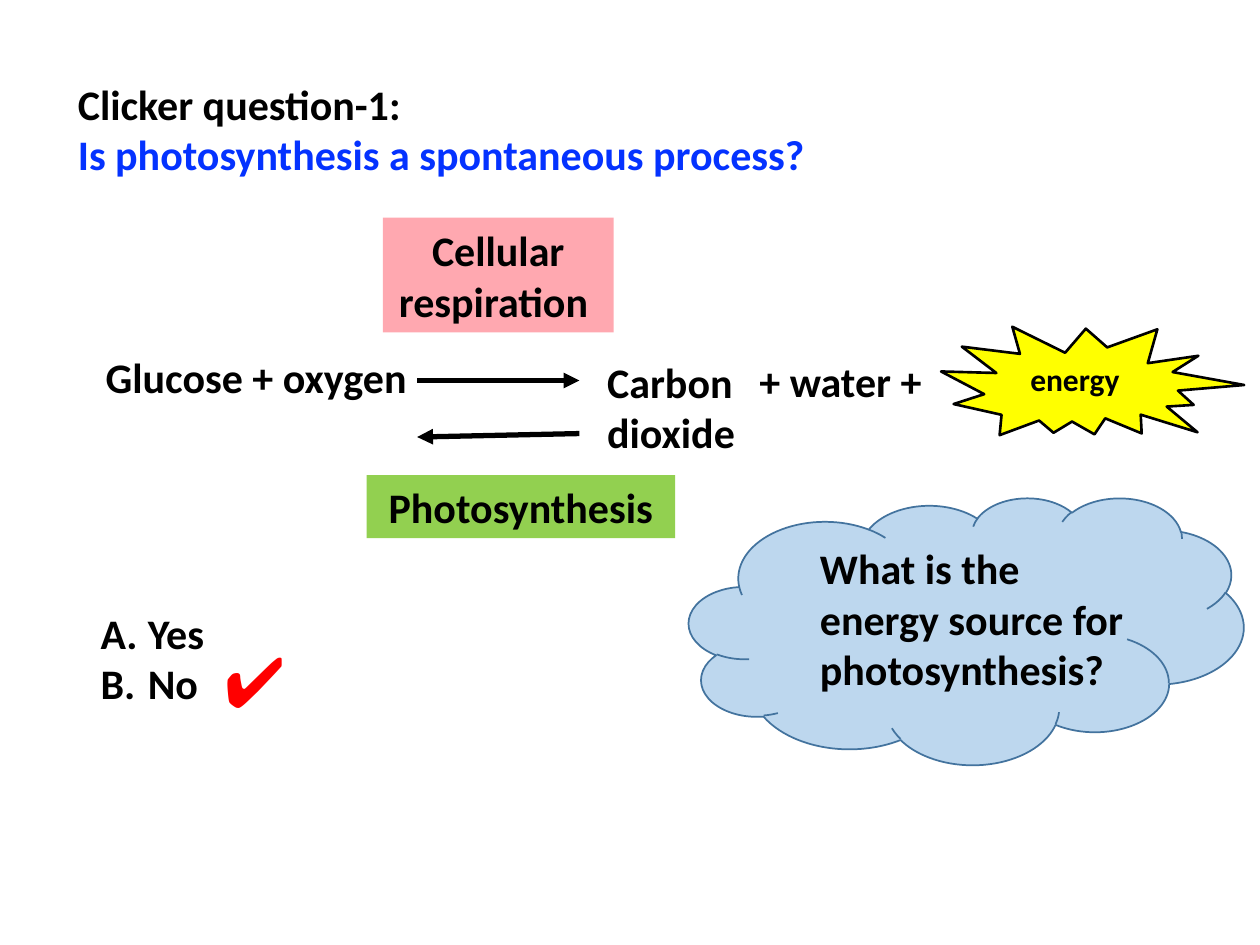
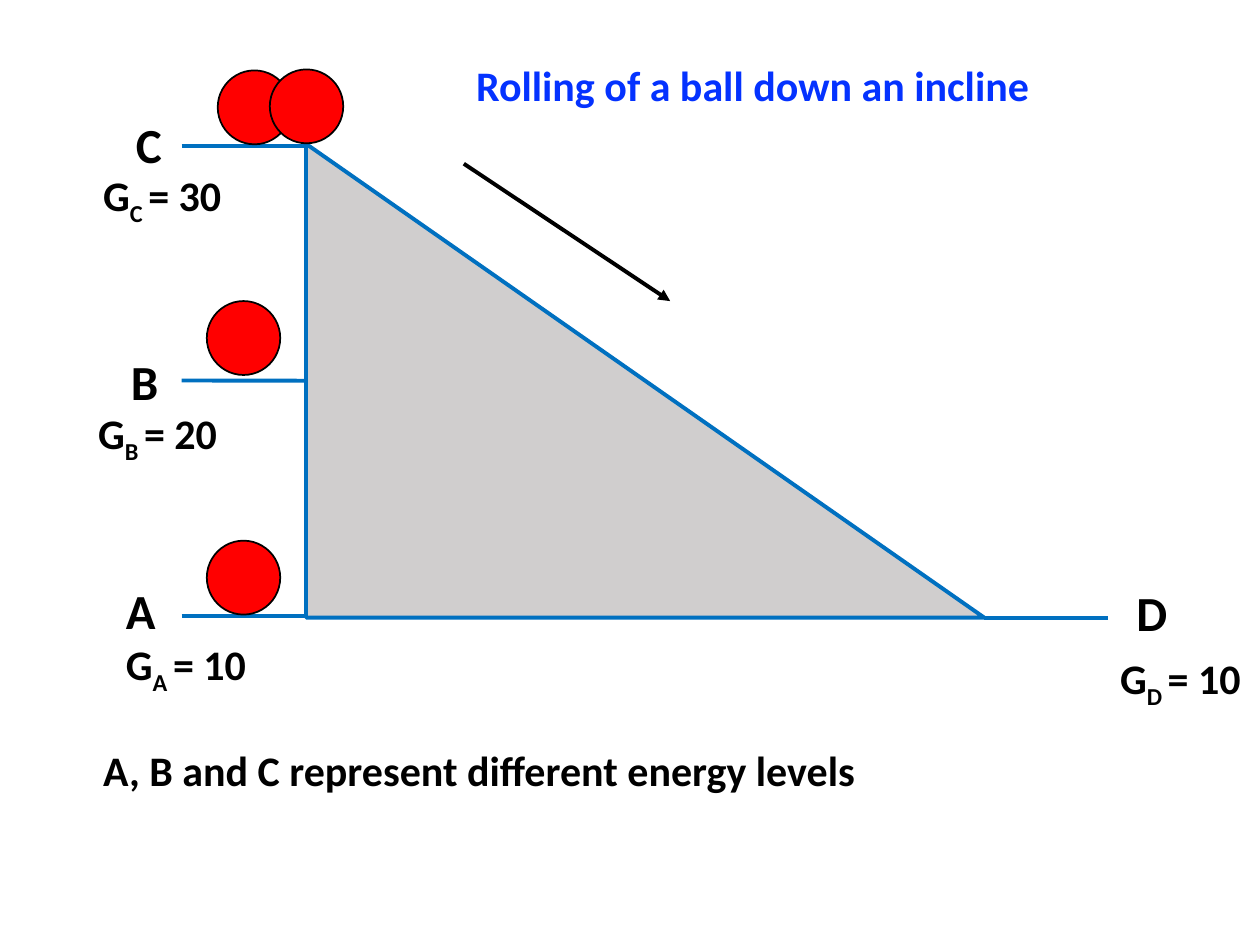
from pptx import Presentation
from pptx.dml.color import RGBColor
from pptx.enum.shapes import MSO_CONNECTOR, MSO_SHAPE
from pptx.enum.text import MSO_AUTO_SIZE, PP_ALIGN
from pptx.oxml.ns import qn
from pptx.util import Cm, Pt
from lxml import etree

RECT = MSO_SHAPE.RECTANGLE
OVAL = MSO_SHAPE.OVAL
CLOUD = MSO_SHAPE.CLOUD
BURST = MSO_SHAPE.EXPLOSION2
TRIANGLE = MSO_SHAPE.RIGHT_TRIANGLE
STRAIGHT = MSO_CONNECTOR.STRAIGHT
CENTER = PP_ALIGN.CENTER
FIT_TEXT = MSO_AUTO_SIZE.SHAPE_TO_FIT_TEXT

# Shared look
FONT = "Calibri"
BLACK, BLUE, RED = "000000", "0432FF", "FF0000"
INCLINE_BLUE = "0070C0"


def rgb(value):
    return RGBColor.from_string(value)


# Text
def add_run(p, text, size=24, color=BLACK, bold=True, subscript=False):
    r = p.add_run()
    r.text = text
    r.font.name = FONT
    r.font.size = Pt(size)
    r.font.bold = bold
    r.font.color.rgb = rgb(color)
    if subscript:
        r._r.get_or_add_rPr().set("baseline", "-25000")


def write(sp, *lines, align=None, wrap=True, **style):
    """Each line is a string or a list of (text, style) runs."""
    tf = sp.text_frame
    tf.word_wrap = wrap
    tf.auto_size = FIT_TEXT
    for i, line in enumerate(lines):
        p = tf.add_paragraph() if i else tf.paragraphs[0]
        p.alignment = align
        runs = [(line, {})] if isinstance(line, str) else line
        for text, extra in runs:
            add_run(p, text, **{**style, **extra})
    return sp


def add_text(s, box, *lines, **style):
    return write(s.shapes.add_textbox(*map(Cm, box)), *lines, **style)


def number_with_letters(sp):
    for p in sp.text_frame.paragraphs:
        pPr = p._p.get_or_add_pPr()
        pPr.set("marL", str(Cm(0.95)))
        pPr.set("indent", str(Cm(-0.95)))
        etree.SubElement(pPr, qn("a:buFont"), typeface=FONT)
        etree.SubElement(pPr, qn("a:buAutoNum"), type="alphaUcPeriod")


# Shapes and lines
def add_shape(s, kind, box, fill, line=None, width=1):
    sp = s.shapes.add_shape(kind, *map(Cm, box))
    sp.shadow.inherit = False
    sp.fill.solid()
    sp.fill.fore_color.rgb = rgb(fill)
    if line:
        sp.line.color.rgb = rgb(line)
        sp.line.width = Pt(width)
    else:
        sp.line.fill.background()
    return sp


def add_line(s, start, end, color=BLACK, width=2.25, arrow=False):
    line = s.shapes.add_connector(STRAIGHT, *map(Cm, start + end))
    line.line.color.rgb = rgb(color)
    line.line.width = Pt(width)
    if arrow:
        etree.SubElement(line.line._get_or_add_ln(), qn("a:tailEnd"), type="triangle")
    etree.SubElement(line._element.spPr, qn("a:effectLst"))
    return line


def add_ball(s, left, top):
    add_shape(s, OVAL, (left, top, 1.48, 1.49), RED, BLACK)


def add_level_label(s, letter, energy, letter_at, energy_at):
    add_text(s, letter_at + (2.13, 1.45), letter, size=28)
    formula = [("G", {}), (f"{letter} ", {"subscript": True}), (f"= {energy}", {})]
    add_text(s, energy_at + (3.4, 1.27), formula, wrap=False)


# Slides
def build_question(s):
    # Reaction equation
    burst = add_shape(s, BURST, (18.97, 6.43, 6.07, 2.64), "FFFF00", BLACK, 1.5)
    burst.rotation = 9.7
    add_text(s, (20.52, 7.14, 2.62, 1.04), "energy", size=18)
    add_text(s, (11.99, 7.06, 3.25, 2.31), "Carbon dioxide")
    add_text(s, (1.88, 6.96, 6.83, 1.27), "Glucose + oxygen", wrap=False)
    add_text(s, (15.06, 7.04, 3.81, 1.27), "+ water +", wrap=False)
    add_line(s, (8.41, 7.67), (11.68, 7.67), width=3, arrow=True)
    add_line(s, (11.68, 8.74), (8.41, 8.81), width=3, arrow=True)

    # Question and process names
    add_text(s, (1.32, 1.45, 22.66, 2.31), "Clicker question-1:",
             [("Is photosynthesis a spontaneous process?", {"color": BLUE})])
    respiration = add_shape(s, RECT, (7.72, 4.39, 4.65, 2.31), "FFA8B0")
    write(respiration, "Cellular respiration ", align=CENTER)
    photosynthesis = add_shape(s, RECT, (7.39, 9.58, 6.22, 1.27), "92D050")
    write(photosynthesis, "Photosynthesis", align=CENTER)

    # Answers and follow-up
    number_with_letters(add_text(s, (1.78, 12.12, 5.18, 2.31), "Yes", "No"))
    add_shape(s, CLOUD, (13.89, 10.03, 11.18, 5.38), "BDD7EE", "43739E")
    add_text(s, (16.28, 10.82, 6.91, 3.33),
             "What is the energy source for photosynthesis?")
    add_text(s, (4.27, 12.73, 3.45, 1.96), "✔", size=40, color=RED, bold=False)


def build_incline(s):
    # Incline with its levels
    left, top, width, height = 6.17, 2.9, 13.67, 9.55
    right, bottom = left + width, top + height
    incline = add_shape(s, TRIANGLE, (left, top, width, height),
                        "D0CECE", INCLINE_BLUE, 2.25)
    level_b = None
    for y in (2.95, 7.67, 12.42):
        line = add_line(s, (3.66, y), (left, y), INCLINE_BLUE)
        level_b = line if y == 7.67 else level_b
    level_b.end_connect(incline, 1)
    add_line(s, (right, bottom), (22.33, bottom), INCLINE_BLUE)

    # Level names and energies
    add_level_label(s, "A", 10, (2.29, 11.58), (2.29, 12.75))
    add_level_label(s, "B", 20, (2.39, 6.96), (1.73, 8.1))
    add_level_label(s, "C", 30, (2.49, 2.18), (1.83, 3.3))
    add_level_label(s, "D", 10, (22.66, 11.61), (22.33, 13.03))

    # Balls and rolling direction
    for at in ((4.39, 1.42), (4.17, 6.07), (4.17, 10.9), (5.44, 1.4)):
        add_ball(s, *at)
    add_line(s, (9.35, 3.3), (13.51, 6.07), arrow=True)

    # Title and caption
    add_text(s, (9.35, 1.07, 14.63, 1.27), "Rolling of a ball down an incline",
             color=BLUE)
    add_text(s, (1.83, 14.88, 20.57, 1.27),
             "A, B and C represent different energy levels")


def main():
    prs = Presentation()
    prs.slide_width, prs.slide_height = Cm(25.4), Cm(19.05)
    for build in (build_question, build_incline):
        build(prs.slides.add_slide(prs.slide_layouts[6]))
    prs.save("out.pptx")


if __name__ == "__main__":
    main()
